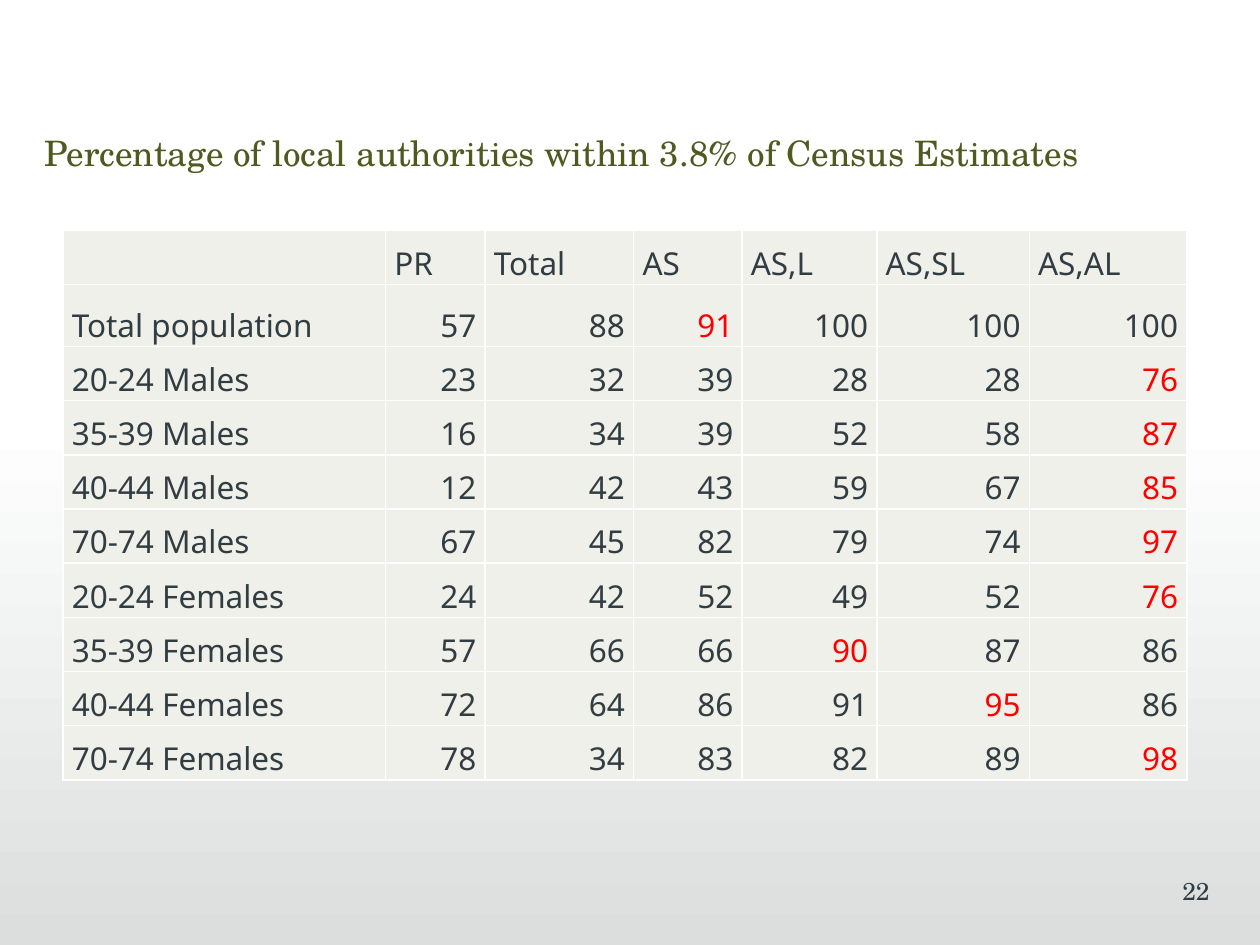
from lxml import etree
from pptx import Presentation
from pptx.dml.color import RGBColor
from pptx.enum.shapes import MSO_SHAPE
from pptx.enum.text import MSO_ANCHOR, PP_ALIGN
from pptx.oxml.ns import qn
from pptx.util import Inches, Pt

RECTANGLE = MSO_SHAPE.RECTANGLE
TOP, BOTTOM = MSO_ANCHOR.TOP, MSO_ANCHOR.BOTTOM
LEFT, RIGHT = PP_ALIGN.LEFT, PP_ALIGN.RIGHT

WHITE = RGBColor(0xFF, 0xFF, 0xFF)
GREY = RGBColor(0xDC, 0xDE, 0xDE)
OLIVE = RGBColor(0x4F, 0x5A, 0x20)
SLATE = RGBColor(0x32, 0x3D, 0x43)
RED = RGBColor(0xFF, 0x00, 0x00)
CELL_FILL = RGBColor(0xEF, 0xF0, 0xE9)
SERIF, SANS = "TeX Gyre Schola", "Noto Sans"

TITLE = "Percentage of local authorities within 3.8% of Census Estimates"
PAGE_NUMBER = "22"
HEADER = ("", "PR", "Total", "AS", "AS,L", "AS,SL", "AS,AL")
ROWS = [
    ("Total population", 57, 88, 91, 100, 100, 100),
    ("20-24 Males", 23, 32, 39, 28, 28, 76),
    ("35-39 Males", 16, 34, 39, 52, 58, 87),
    ("40-44 Males", 12, 42, 43, 59, 67, 85),
    ("70-74 Males", 67, 45, 82, 79, 74, 97),
    ("20-24 Females", 24, 42, 52, 49, 52, 76),
    ("35-39 Females", 57, 66, 66, 90, 87, 86),
    ("40-44 Females", 72, 64, 86, 91, 95, 86),
    ("70-74 Females", 78, 34, 83, 82, 89, 98),
]
HIGHLIGHTED = ("AS", "AS,AL", "AS,AL", "AS,AL", "AS,AL", "AS,AL", "AS,L", "AS,SL", "AS,AL")
COLUMN_WIDTHS = (2.56, 0.79, 1.18, 0.86, 1.07, 1.21, 1.25)
ROW_HEIGHT, TOTAL_ROW_HEIGHT = 0.43, 0.49


def style_text(frame, text, size, font_name, color, alignment):
    frame.text = text
    para = frame.paragraphs[0]
    para.alignment = alignment
    font = para.font if not para.runs else para.runs[0].font
    font.size, font.name, font.color.rgb = Pt(size), font_name, color
    return para


def set_margins(target, left, top, right, bottom):
    target.margin_left, target.margin_right = Inches(left), Inches(right)
    target.margin_top, target.margin_bottom = Inches(top), Inches(bottom)


def place(shape, left, top, width, height):
    shape.left, shape.top = Inches(left), Inches(top)
    shape.width, shape.height = Inches(width), Inches(height)


def add_borders(cell):
    properties = cell._tc.get_or_add_tcPr()
    for index, side in enumerate(("lnL", "lnR", "lnT", "lnB")):
        line = etree.Element(qn(f"a:{side}"), w=str(Pt(1)))
        solid = etree.SubElement(line, qn("a:solidFill"))
        etree.SubElement(solid, qn("a:srgbClr"), val=str(WHITE))
        properties.insert(index, line)


def add_background(page):
    band = page.shapes.add_shape(
        RECTANGLE, Inches(-0.09), Inches(3.33), Inches(10.09), Inches(4.17))
    band.shadow.inherit = False
    band.line.fill.background()
    band.fill.gradient()
    band.fill.gradient_angle = 270
    for stop, color, position in zip(band.fill.gradient_stops, (WHITE, GREY), (0, 1)):
        stop.color.rgb = color
        stop.position = position


def add_title(page):
    title = page.shapes.title
    place(title, 0.35, 0.99, 9.29, 0.71)
    frame = title.text_frame
    style_text(frame, TITLE, 20, SERIF, OLIVE, LEFT)
    frame.vertical_anchor = TOP
    set_margins(frame, 0, 0.05, 0.1, 0.05)


def add_results(page):
    records = [HEADER, *ROWS]
    heights = [ROW_HEIGHT, TOTAL_ROW_HEIGHT] + [ROW_HEIGHT] * (len(ROWS) - 1)
    table = page.shapes.add_table(
        len(records), len(HEADER), Inches(0.5), Inches(1.83),
        Inches(sum(COLUMN_WIDTHS)), Inches(sum(heights))).table
    for column, width in zip(table.columns, COLUMN_WIDTHS):
        column.width = Inches(width)
    for row, height in zip(table.rows, heights):
        row.height = Inches(height)
    for row_index, record in enumerate(records):
        for column_index, value in enumerate(record):
            cell = table.cell(row_index, column_index)
            best = row_index > 0 and HEADER[column_index] == HIGHLIGHTED[row_index - 1]
            para = style_text(cell.text_frame, str(value), 18, SANS,
                              RED if best else SLATE,
                              RIGHT if isinstance(value, int) else LEFT)
            para.line_spacing = 1.15
            para.font.bold = False
            cell.vertical_anchor = BOTTOM
            set_margins(cell, 0.07, 0, 0.07, 0)
            cell.fill.solid()
            cell.fill.fore_color.rgb = CELL_FILL
            add_borders(cell)
    table.first_row = False
    table.horz_banding = False


def add_page_number(page):
    box = page.shapes.add_textbox(Inches(7.52), Inches(6.9), Inches(2.08), Inches(0.5))
    frame = box.text_frame
    frame.word_wrap = True
    set_margins(frame, 0.1, 0.05, 0, 0.05)
    style_text(frame, PAGE_NUMBER, 14, SERIF, SLATE, RIGHT)


def main():
    deck = Presentation()
    deck.slide_width, deck.slide_height = Inches(10), Inches(7.5)
    page = deck.slides.add_slide(deck.slide_layouts[5])
    add_background(page)
    add_title(page)
    add_results(page)
    add_page_number(page)
    deck.save("out.pptx")


if __name__ == "__main__":
    main()
